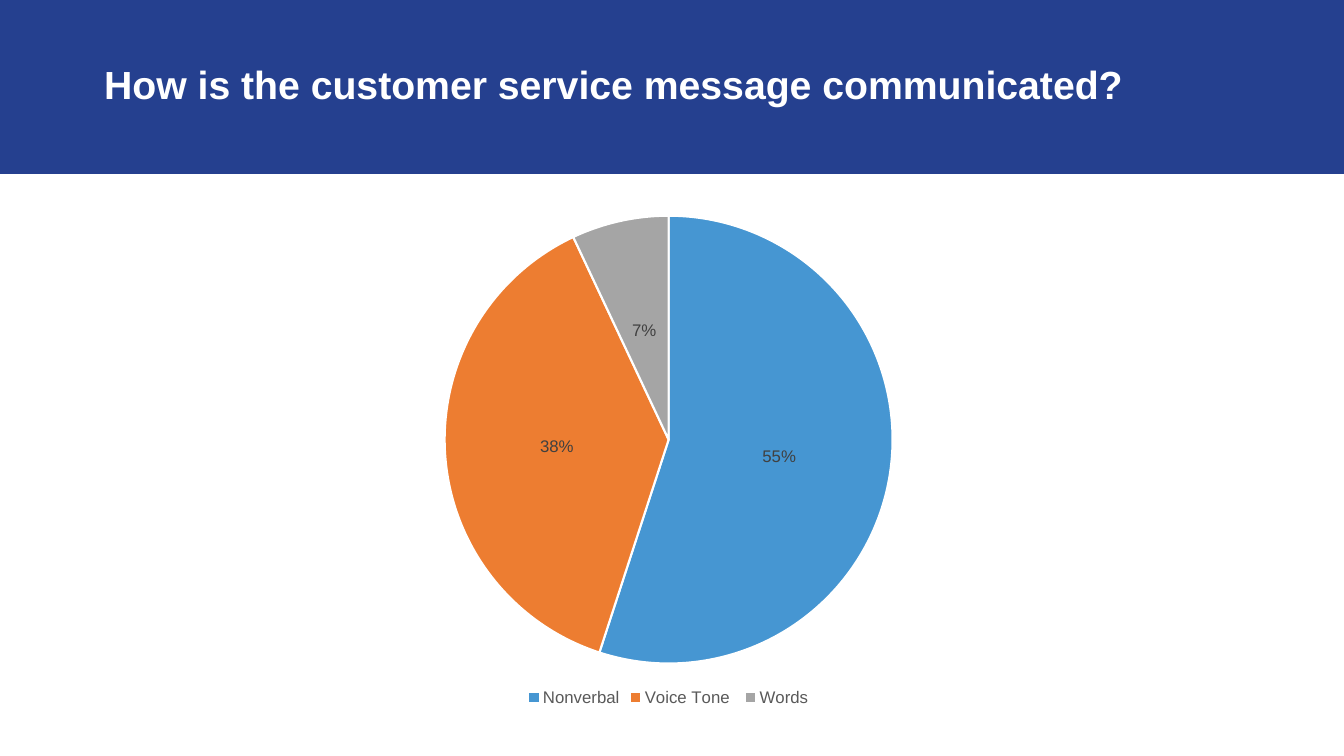
import pptx
import pptx.chart.data
import pptx.dml.color
import pptx.enum.chart
import pptx.enum.shapes
import pptx.enum.text
import pptx.util

COLOURS = {
    "banner": "25408F",
    "white": "FFFFFF",
    "label": "404040",
    "legend": "595959",
    "nonverbal": "4696D2",
    "voice": "ED7D31",
    "words": "A5A5A5",
}


def colour(name):
    return pptx.dml.color.RGBColor.from_string(COLOURS[name])


class SlideBuilder:
    """Places elements on one slide; boxes are shares of the slide's size."""

    font_name = "Arial"

    def __init__(self, deck):
        self.deck = deck
        self.page = deck.slides.add_slide(deck.slide_layouts[5])

    def lengths(self, left, top, width, height):
        across, down = self.deck.slide_width, self.deck.slide_height
        return (int(left * across), int(top * down),
                int(width * across), int(height * down))

    def style(self, font, size, colour_name, bold=False):
        font.name = self.font_name
        font.size = pptx.util.Pt(size)
        font.bold = bold
        font.color.rgb = colour(colour_name)

    def banner(self, share):
        """Fill a band at the top of the slide, behind the title."""
        band = self.page.shapes.add_shape(
            pptx.enum.shapes.MSO_SHAPE.RECTANGLE, *self.lengths(0, 0, 1, share))
        band.shadow.inherit = False
        band.fill.solid()
        band.fill.fore_color.rgb = colour("banner")
        band.line.fill.background()
        self.page.shapes.title.element.addprevious(band.element)

    def title(self, text, share_box):
        title = self.page.shapes.title
        title.left, title.top, title.width, title.height = self.lengths(*share_box)
        frame = title.text_frame
        frame.text = text
        frame.word_wrap = True
        frame.vertical_anchor = pptx.enum.text.MSO_ANCHOR.MIDDLE
        para = frame.paragraphs[0]
        para.alignment = pptx.enum.text.PP_ALIGN.LEFT
        para.line_spacing = 0.9
        self.style(para.runs[0].font, 28, "white", bold=True)

    def pie(self, slices, share_box):
        """Draw a pie from (category, value, colour name) rows."""
        data = pptx.chart.data.CategoryChartData()
        data.categories = [category for category, _, _ in slices]
        data.add_series("Series 1", [value for _, value, _ in slices])
        chart = self.page.shapes.add_chart(
            pptx.enum.chart.XL_CHART_TYPE.PIE, *self.lengths(*share_box), data).chart
        chart.has_title = False
        chart.font.name = self.font_name
        chart.font.size = pptx.util.Pt(10)

        chart.has_legend = True
        chart.legend.position = pptx.enum.chart.XL_LEGEND_POSITION.BOTTOM
        chart.legend.include_in_layout = False
        self.style(chart.legend.font, 12, "legend")

        plot = chart.plots[0]
        plot.vary_by_categories = True
        for index, (_, _, name) in enumerate(slices):
            wedge = plot.series[0].points[index].format
            wedge.fill.solid()
            wedge.fill.fore_color.rgb = colour(name)
            wedge.line.color.rgb = colour("white")
            wedge.line.width = pptx.util.Pt(1.5)

        plot.has_data_labels = True
        labels = plot.data_labels
        labels.show_value = False
        labels.show_percentage = True
        labels.number_format = "0%"
        labels.number_format_is_linked = False
        labels.position = pptx.enum.chart.XL_LABEL_POSITION.CENTER
        self.style(labels.font, 12, "label")


def main():
    deck = pptx.Presentation()
    deck.slide_width = pptx.util.Inches(13.33)
    deck.slide_height = pptx.util.Inches(7.5)
    slide = SlideBuilder(deck)
    slide.banner(0.23)
    slide.title("How is the customer service message communicated?",
                (0.07, 0.02, 0.86, 0.19))
    slide.pie([("Nonverbal", 55, "nonverbal"),
               ("Voice Tone ", 38, "voice"),
               ("Words", 7, "words")],
              (0.035, 0.267, 0.925, 0.673))
    deck.save("out.pptx")


if __name__ == "__main__":
    main()
